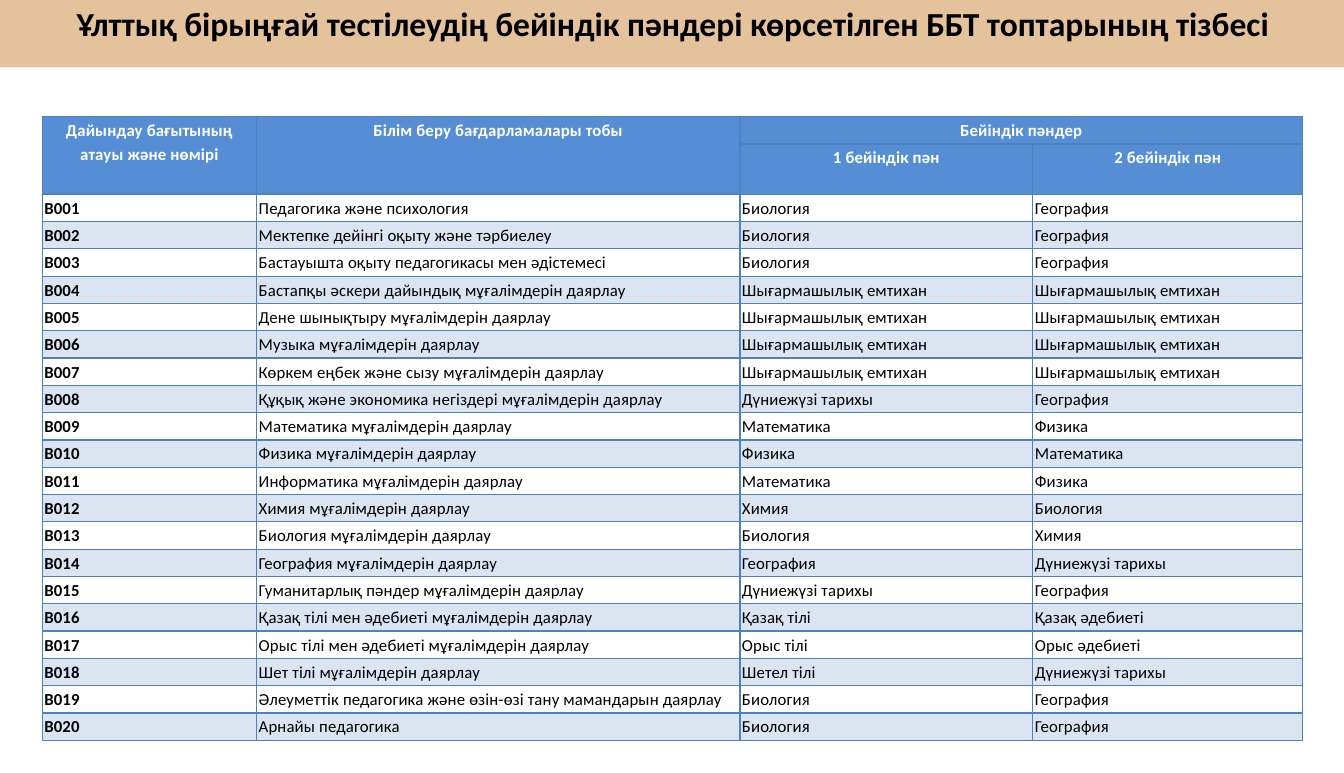
from lxml.etree import SubElement
from pptx import Presentation
from pptx.dml.color import RGBColor
from pptx.enum.shapes import MSO_SHAPE
from pptx.enum.text import MSO_ANCHOR, PP_ALIGN
from pptx.oxml import parse_xml
from pptx.oxml.ns import nsdecls, qn
from pptx.util import Inches, Pt

FONT = "Calibri"
BLACK, WHITE = "000000", "FFFFFF"
BANNER, HEADER, ACCENT = "E4C29C", "558ED5", "4F81BD"
TITLE = "Ұлттық бірыңғай тестілеудің бейіндік пәндері көрсетілген ББТ топтарының тізбесі"
COLUMN_WIDTHS = (2.13, 4.8, 2.91, 2.68)
HEADER_HEIGHTS = (0.27, 0.5)
GROUPS_HEIGHT = 5.43
HEADINGS = (
    (0, 0, 1, 0, "Дайындау бағытының атауы және нөмірі"),
    (0, 1, 1, 1, "Білім беру бағдарламалары тобы"),
    (0, 2, 0, 3, "Бейіндік пәндер"),
    (1, 2, 1, 2, "1 бейіндік пән"),
    (1, 3, 1, 3, "2 бейіндік пән"),
)
CREATIVE_EXAM = "Шығармашылық емтихан"
WORLD_HISTORY = "Дүниежүзі тарихы"
GROUPS = (
    ("Педагогика және психология", "Биология", "География"),
    ("Мектепке дейінгі оқыту және тәрбиелеу", "Биология", "География"),
    ("Бастауышта оқыту педагогикасы мен әдістемесі", "Биология", "География"),
    ("Бастапқы әскери дайындық мұғалімдерін даярлау", CREATIVE_EXAM, CREATIVE_EXAM),
    ("Дене шынықтыру мұғалімдерін даярлау", CREATIVE_EXAM, CREATIVE_EXAM),
    ("Музыка мұғалімдерін даярлау", CREATIVE_EXAM, CREATIVE_EXAM),
    ("Көркем еңбек және сызу мұғалімдерін даярлау", CREATIVE_EXAM, CREATIVE_EXAM),
    ("Құқық және экономика негіздері мұғалімдерін даярлау", WORLD_HISTORY, "География"),
    ("Математика мұғалімдерін даярлау", "Математика", "Физика"),
    ("Физика мұғалімдерін даярлау", "Физика", "Математика"),
    ("Информатика мұғалімдерін даярлау", "Математика", "Физика"),
    ("Химия мұғалімдерін даярлау", "Химия", "Биология"),
    ("Биология мұғалімдерін даярлау", "Биология", "Химия"),
    ("География мұғалімдерін даярлау", "География", WORLD_HISTORY),
    ("Гуманитарлық пәндер мұғалімдерін даярлау", WORLD_HISTORY, "География"),
    ("Қазақ тілі мен әдебиеті мұғалімдерін даярлау", "Қазақ тілі", "Қазақ әдебиеті"),
    ("Орыс тілі мен әдебиеті мұғалімдерін даярлау", "Орыс тілі", "Орыс әдебиеті"),
    ("Шет тілі мұғалімдерін даярлау", "Шетел тілі", WORLD_HISTORY),
    ("Әлеуметтік педагогика және өзін-өзі тану мамандарын даярлау", "Биология", "География"),
    ("Арнайы педагогика", "Биология", "География"),
)


def color(hex_value):
    """Turn a hex string into a colour."""
    return RGBColor.from_string(hex_value)


def write_text(frame, text, size, hex_value, bold, align):
    """Write one formatted paragraph and return it."""
    frame.text = text
    paragraph = frame.paragraphs[0]
    paragraph.alignment = align
    font = paragraph.runs[0].font
    font.name, font.size, font.bold = FONT, Pt(size), bold
    font.color.rgb = color(hex_value)
    return paragraph


def write_cell(cell, text, hex_value=BLACK, bold=False, align=PP_ALIGN.LEFT):
    """Write a table cell with tight margins and loose lines."""
    cell.margin_left = cell.margin_right = Inches(0.02)
    cell.margin_top = cell.margin_bottom = Inches(0.01)
    cell.vertical_anchor = MSO_ANCHOR.TOP
    paragraph = write_text(cell.text_frame, text, 12, hex_value, bold, align)
    paragraph.line_spacing = 1.15
    paragraph.runs[0].font._element.set("spc", "10")


def fill_cell(cell, hex_value=None, opacity=100):
    """Fill a cell, or leave it clear when no colour is given."""
    if hex_value is None:
        cell.fill.background()
        return
    cell.fill.solid()
    cell.fill.fore_color.rgb = color(hex_value)
    if opacity < 100:
        tint = cell._tc.tcPr.find(qn("a:solidFill"))[0]
        SubElement(tint, qn("a:alpha")).set("val", str(opacity * 1000))


def border_cell(cell, bottom_width):
    """Draw the four borders of a cell."""
    widths = {"lnL": 1, "lnR": 1, "lnT": 1, "lnB": bottom_width}
    for position, (side, width) in enumerate(widths.items()):
        border = parse_xml(
            f'<a:{side} {nsdecls("a")} w="{Pt(width)}"><a:solidFill>'
            f'<a:srgbClr val="{ACCENT}"/></a:solidFill></a:{side}>'
        )
        cell._tc.get_or_add_tcPr().insert(position, border)


def add_headings(table):
    """Write the two-level heading, merging where it spans."""
    for top, left, bottom, right, text in HEADINGS:
        cell = table.cell(top, left)
        if (top, left) != (bottom, right):
            cell.merge(table.cell(bottom, right))
        write_cell(cell, text, WHITE, True, PP_ALIGN.CENTER)


def add_groups_table(slide):
    """Add the table of programme groups and their subjects."""
    header_rows = len(HEADER_HEIGHTS)
    heights = HEADER_HEIGHTS + (GROUPS_HEIGHT / len(GROUPS),) * len(GROUPS)
    table = slide.shapes.add_table(
        len(heights), len(COLUMN_WIDTHS), Inches(0.42), Inches(1.16),
        Inches(sum(COLUMN_WIDTHS)), Inches(sum(heights)),
    ).table
    table.first_row = table.horz_banding = False
    for column, width in zip(table.columns, COLUMN_WIDTHS):
        column.width = Inches(width)
    for row, height in zip(table.rows, heights):
        row.height = Inches(height)

    add_headings(table)
    for number, group in enumerate(GROUPS, 1):
        for column, text in enumerate((f"В{number:03}", *group)):
            cell = table.cell(number + header_rows - 1, column)
            write_cell(cell, text, bold=column == 0)

    for index, row in enumerate(table.rows):
        for cell in row.cells:
            if index < header_rows:
                fill_cell(cell, HEADER)
            elif index % 2:
                fill_cell(cell, ACCENT, 20)
            else:
                fill_cell(cell)
            border_cell(cell, 2 if index == 0 else 1)


def add_title_banner(slide):
    """Add the title on its full-width band."""
    banner = slide.shapes.add_shape(
        MSO_SHAPE.RECTANGLE, Inches(0), Inches(-0.02), Inches(13.37), Inches(0.69)
    )
    banner.shadow.inherit = False
    banner.fill.solid()
    banner.fill.fore_color.rgb = color(BANNER)
    banner.line.fill.background()
    banner.text_frame.word_wrap = True
    banner.text_frame.vertical_anchor = MSO_ANCHOR.TOP
    write_text(banner.text_frame, TITLE, 24, BLACK, True, PP_ALIGN.CENTER)


def main():
    """Build the slide and save it."""
    presentation = Presentation()
    presentation.slide_width = Inches(13.35)
    presentation.slide_height = Inches(7.68)
    slide = presentation.slides.add_slide(presentation.slide_layouts[6])
    add_groups_table(slide)
    add_title_banner(slide)
    presentation.save("out.pptx")


if __name__ == "__main__":
    main()
